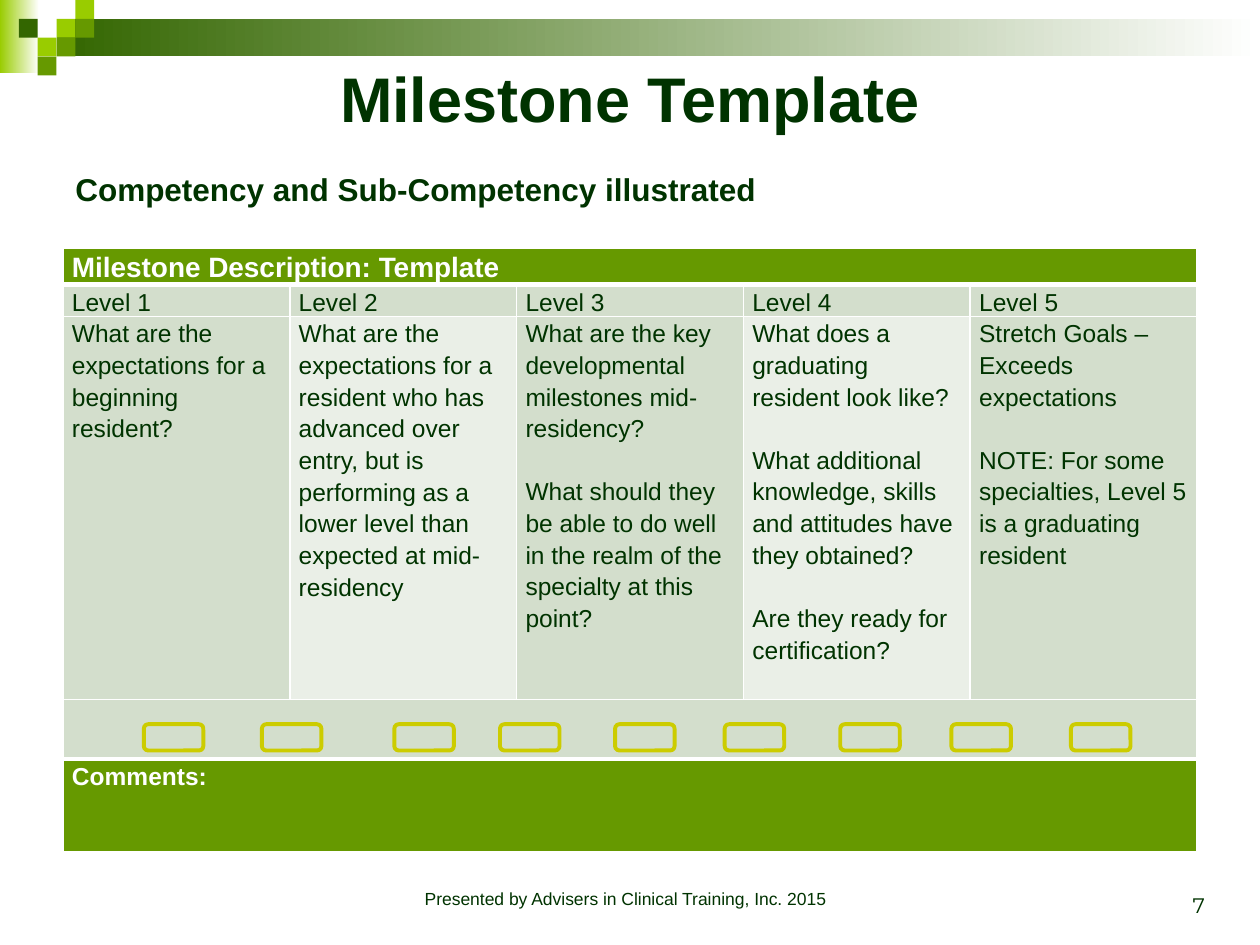
from collections import namedtuple
from lxml.etree import SubElement
from pptx import Presentation
from pptx.dml.color import RGBColor as Rgb
from pptx.enum.shapes import MSO_SHAPE as Shape
from pptx.enum.text import MSO_ANCHOR as Anchor, PP_ALIGN as Align
from pptx.oxml.ns import qn
from pptx.util import Cm, Pt

Box = namedtuple("Box", "x y w h")
HEX = {
    "dark": "336600", "mid": "669900", "lime": "99CC00", "white": "FFFFFF",
    "ink": "003300", "band": "D3DECC", "pale": "EAEFE7", "gold": "CCCC00",
}
GOALS = [
    ["What are the expectations for a beginning resident?"],
    ["What are the expectations for a resident who has advanced over entry, "
     "but is performing as a lower level than expected at mid-residency"],
    ["What are the key developmental milestones mid-residency?",
     "What should they be able to do well in the realm of the specialty "
     "at this point?"],
    ["What does a graduating resident look like?",
     "What additional knowledge, skills and attitudes have they obtained?",
     "Are they ready for certification?"],
    ["Stretch Goals – Exceeds expectations",
     "NOTE: For some specialties, Level 5 is a graduating resident"],
]


def tint(name):
    return Rgb.from_string(HEX[name])


def place(shape, box):
    shape.left, shape.top, shape.width, shape.height = map(Cm, box)


def style(par, size, color="ink", bold=False, face="Arial"):
    font = par.font
    font.size, font.bold, font.name = Pt(size), bold, face
    font.color.rgb = tint(color)


def add_block(slide, box, color, fade=False):
    """Add a borderless rectangle, solid or fading to white at the right."""
    block = slide.shapes.add_shape(Shape.RECTANGLE, *map(Cm, box))
    block.shadow.inherit = False
    block.line.fill.background()
    if fade:
        block.fill.gradient()
        block.fill.gradient_angle = 0
        for stop, name in zip(block.fill.gradient_stops, (color, "white")):
            stop.color.rgb = tint(name)
    else:
        block.fill.solid()
        block.fill.fore_color.rgb = tint(color)


def add_banner(slide, box):
    unit = 0.38
    add_block(slide, Box(box.x, box.y, 0.79, 1.47), "lime", True)
    left = 3 * unit
    add_block(slide, Box(box.x + left, box.y + unit, box.w - left, 2 * unit),
              "dark", True)
    tiles = [(3, 1, "lime"), (4, 0, "lime"), (4, 1, "mid"), (2, 2, "lime"),
             (1, 1, "dark"), (3, 2, "mid"), (2, 3, "mid")]
    for col, row, color in tiles:
        add_block(slide, Box(box.x + col * unit, box.y + row * unit,
                             unit, unit), color)


def add_title(slide, box, text):
    title = slide.shapes.title
    place(title, box)
    frame = title.text_frame
    frame.text, frame.vertical_anchor = text, Anchor.MIDDLE
    par = frame.paragraphs[0]
    par.alignment = Align.CENTER
    style(par, 36, bold=True)


def add_label(slide, box, text, size, align=Align.LEFT, anchor=Anchor.TOP,
              wrap=True, **look):
    frame = slide.shapes.add_textbox(*map(Cm, box)).text_frame
    frame.text, frame.word_wrap, frame.vertical_anchor = text, wrap, anchor
    par = frame.paragraphs[0]
    par.alignment = align
    style(par, size, **look)


def set_edges(cell, top=1, bottom=1):
    """Draw white cell borders, with widths in points."""
    props = cell._tc.get_or_add_tcPr()
    edges = [("L", 1), ("R", 1), ("T", top), ("B", bottom)]
    for spot, (side, width) in enumerate(edges):
        line = SubElement(props, qn(f"a:ln{side}"), w=str(Pt(width)))
        fill = SubElement(line, qn("a:solidFill"))
        SubElement(fill, qn("a:srgbClr"), val=HEX["white"])
        props.insert(spot, line)


def fill_cell(cell, texts, back, size=14, color="ink", bold=False, **edges):
    cell.fill.solid()
    cell.fill.fore_color.rgb = tint(back)
    cell.margin_left = cell.margin_right = Cm(0.18)
    cell.margin_top = cell.margin_bottom = 0
    frame = cell.text_frame
    frame.text = "\n".join(texts)
    for spot, par in enumerate(frame.paragraphs):
        par.line_spacing = 1.15
        par.space_before = Pt(18 if spot else 0)
        style(par, size, color, bold)
    set_edges(cell, **edges)


def add_grid(slide, box):
    count = len(GOALS)
    heights = [0.74, 0.62, 7.72, 1.2, 1.88]
    table = slide.shapes.add_table(len(heights), count,
                                   *map(Cm, box)).table
    for row, height in zip(table.rows, heights):
        row.height = Cm(height)
    for col in table.columns:
        col.width = Cm(box.w / count)
    for row in (0, 3, 4):
        table.cell(row, 0).merge(table.cell(row, count - 1))
    fill_cell(table.cell(0, 0), ["Milestone Description: Template"], "mid",
              16, "white", True, bottom=3)
    for col, goal in enumerate(GOALS):
        fill_cell(table.cell(1, col), [f"Level {col + 1}"], "band")
        fill_cell(table.cell(2, col), goal, "pale" if col % 2 else "band")
    fill_cell(table.cell(3, 0), [], "band", bottom=3)
    fill_cell(table.cell(4, 0), ["Comments:"], "mid", color="white",
              bold=True, top=3)


def add_marks(slide, box):
    """Add the row of rating boxes, set by eye along the levels."""
    for left in (1.63, 4.01, 6.68, 8.81, 11.13, 13.34, 15.67, 17.91, 20.32):
        mark = slide.shapes.add_shape(
            Shape.ROUNDED_RECTANGLE,
            *map(Cm, (box.x + left, box.y, 1.2, box.h)))
        mark.shadow.inherit = False
        mark.fill.background()
        mark.line.color.rgb = tint("gold")
        mark.line.width = Pt(2.25)


def main():
    deck = Presentation()
    deck.slide_width, deck.slide_height = Cm(25.4), Cm(19.05)
    slide = deck.slides.add_slide(deck.slide_layouts[5])
    add_banner(slide, Box(0, 0, 25.4, 1.52))
    add_title(slide, Box(1.27, 0.76, 22.86, 2.41), "Milestone Template")
    add_grid(slide, Box(1.27, 5, 22.86, 12.16))
    add_marks(slide, Box(1.27, 14.6, 22.86, 0.53))
    add_label(slide, Box(1.27, 3.3, 14.38, 1.02),
              "Competency and Sub-Competency illustrated", 18,
              wrap=False, bold=True)
    add_label(slide, Box(6.99, 17.78, 11.23, 0.84),
              "Presented by Advisers in Clinical Training, Inc. 2015", 10,
              Align.CENTER)
    add_label(slide, Box(18.62, 17.35, 5.92, 1.27), "7", 12, Align.RIGHT,
              Anchor.BOTTOM, face="Montserrat")
    deck.save("out.pptx")


if __name__ == "__main__":
    main()
